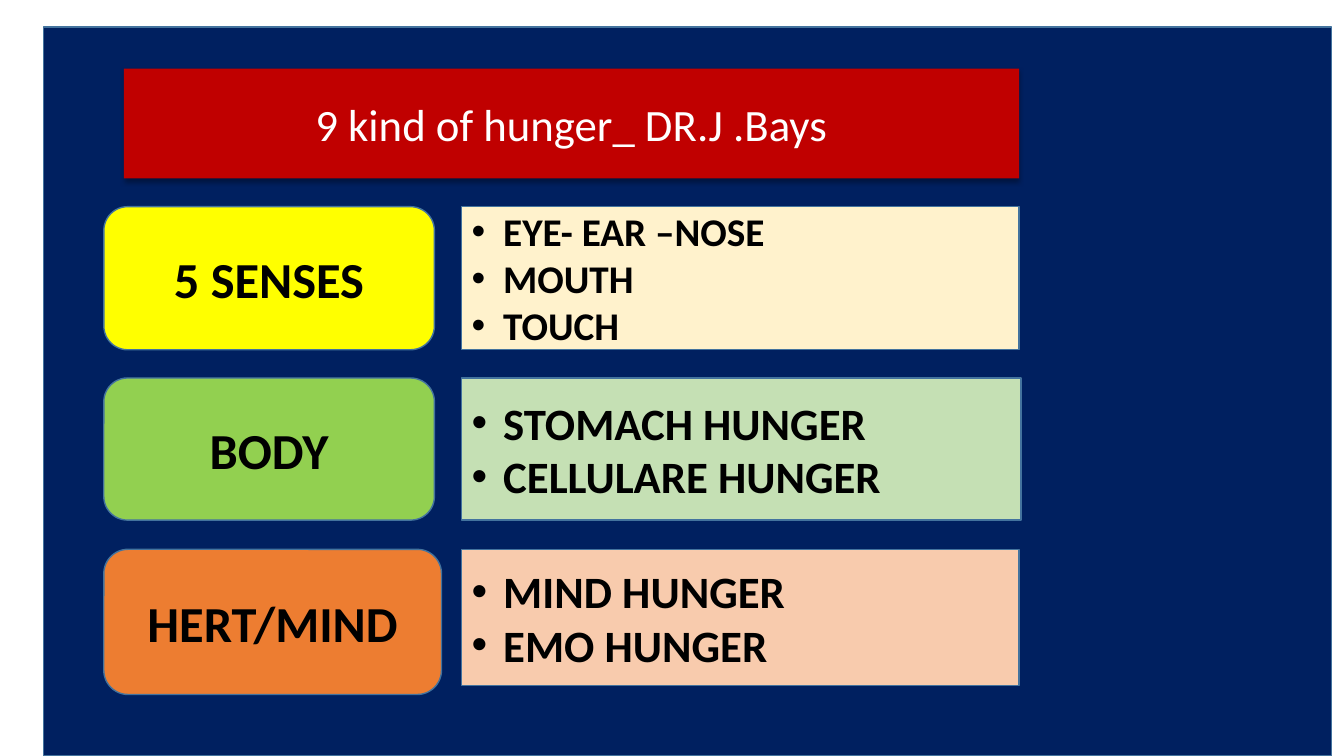
"""Build the slide on the nine kinds of hunger."""
import pptx
import pptx.dml.color
import pptx.enum.shapes
import pptx.enum.text
import pptx.oxml
import pptx.oxml.ns
import pptx.util

Pt = pptx.util.Pt
RGB = pptx.dml.color.RGBColor
MSO = pptx.enum.shapes.MSO_SHAPE
ALIGN = pptx.enum.text.PP_ALIGN

NAVY = RGB(0x00, 0x20, 0x60)
RED = RGB(0xC0, 0x00, 0x00)
WHITE = RGB(0xFF, 0xFF, 0xFF)
BLACK = RGB(0x00, 0x00, 0x00)
OUTLINE = RGB(0x43, 0x73, 0x9E)
YELLOW = RGB(0xFF, 0xFF, 0x00)
GREEN = RGB(0x92, 0xD0, 0x50)
ORANGE = RGB(0xED, 0x7D, 0x31)
CREAM = RGB(0xFF, 0xF2, 0xCC)
PALE_GREEN = RGB(0xC5, 0xE0, 0xB4)
PEACH = RGB(0xF8, 0xCB, 0xAD)

ROW_TOP, ROW_STEP = 147.6, 122.4
LABEL_LEFT, LIST_LEFT = 74.16, 329.76
ROWS = [
    ("5 SENSES", YELLOW, 236.16, 102.24,
     ["EYE- EAR –NOSE", "MOUTH", "TOUCH"], CREAM, 398.16, 102.24, 28),
    ("BODY", GREEN, 236.16, 101.52,
     ["STOMACH HUNGER", "CELLULARE HUNGER"], PALE_GREEN, 399.6, 101.52, 32),
    ("HERT/MIND", ORANGE, 241.2, 103.68,
     ["MIND HUNGER", "EMO HUNGER"], PEACH, 398.16, 97.2, 32),
]


def style_box(sp, left, top, width, height, fill, line=OUTLINE):
    sp.left, sp.top, sp.width, sp.height = Pt(left), Pt(top), Pt(width), Pt(height)
    sp.shadow.inherit = False
    sp.fill.solid()
    sp.fill.fore_color.rgb = fill
    if line is None:
        sp.line.fill.background()
    else:
        sp.line.color.rgb = line
        sp.line.width = Pt(1)
    tf = sp.text_frame
    tf.word_wrap = True
    tf.auto_size = pptx.enum.text.MSO_AUTO_SIZE.NONE
    tf.vertical_anchor = pptx.enum.text.MSO_ANCHOR.MIDDLE
    return tf


def write(p, text, size, color, bold, align):
    p.alignment = align
    p.space_before = Pt(0)
    r = p.add_run()
    r.text = text
    r.font.name = "Calibri"
    r.font.size = Pt(size)
    r.font.bold = bold
    r.font.color.rgb = color


prs = pptx.Presentation()
prs.slide_width, prs.slide_height = Pt(960), Pt(540)
s = prs.slides.add_slide(prs.slide_layouts.get_by_name("Comparison"))
title, *lists, spare = s.placeholders
spare.element.getparent().remove(spare.element)

panel = s.shapes.add_shape(MSO.RECTANGLE, 0, 0, 0, 0)
style_box(panel, 30.96, 19.44, 920.16, 520.56, NAVY)
title.element.addprevious(panel.element)

tf = style_box(title, 88.56, 48.96, 639.36, 78.48, RED, None)
write(tf.paragraphs[0], "9 kind of hunger_ DR.J .Bays", 32, WHITE, False, ALIGN.CENTER)
effects = title.element.spPr.find(pptx.oxml.ns.qn("a:effectLst"))
effects.append(pptx.oxml.parse_xml(
    f'<a:outerShdw {pptx.oxml.ns.nsdecls("a")} blurRad="{Pt(3.5)}" dist="{Pt(2.2)}" '
    'dir="5400000" algn="t" rotWithShape="0">'
    '<a:srgbClr val="000000"><a:alpha val="32000"/></a:srgbClr></a:outerShdw>'))

for i, (body, row) in enumerate(zip(lists, ROWS)):
    label, color, label_w, label_h, items, list_color, list_w, list_h, size = row
    top = ROW_TOP + i * ROW_STEP

    sp = s.shapes.add_shape(MSO.ROUNDED_RECTANGLE, 0, 0, 0, 0)
    tf = style_box(sp, LABEL_LEFT, top, label_w, label_h, color)
    write(tf.paragraphs[0], label, 36, BLACK, True, ALIGN.CENTER)

    tf = style_box(body, LIST_LEFT, top, list_w, list_h, list_color)
    for j, item in enumerate(items):
        p = tf.add_paragraph() if j else tf.paragraphs[0]
        pPr = p._p.get_or_add_pPr()
        pPr.set("marL", str(Pt(22.5)))
        pPr.set("indent", str(-Pt(22.5)))
        for tag, name, value in (("buFont", "typeface", "Arial"), ("buChar", "char", "•")):
            pPr.append(pptx.oxml.parse_xml(
                f'<a:{tag} {pptx.oxml.ns.nsdecls("a")} {name}="{value}"/>'))
        write(p, item, size, BLACK, True, ALIGN.LEFT)

prs.save("out.pptx")
